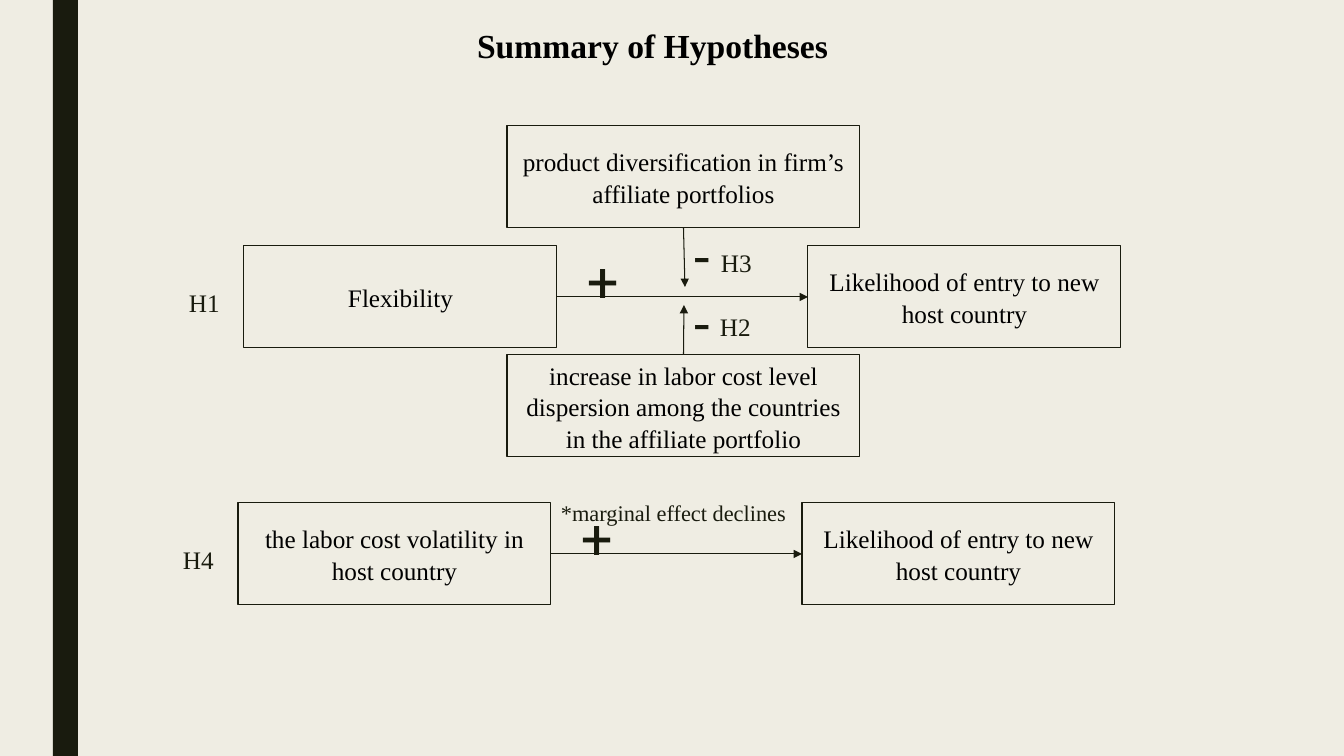
from dataclasses import dataclass

from lxml.etree import SubElement
from pptx import Presentation
from pptx.dml.color import RGBColor
from pptx.enum.shapes import MSO_CONNECTOR, MSO_SHAPE
from pptx.enum.text import MSO_ANCHOR, MSO_AUTO_SIZE, PP_ALIGN
from pptx.oxml.ns import qn
from pptx.util import Emu, Pt

SLIDE_WIDTH, SLIDE_HEIGHT = 1344, 756
TOP, LEFT, BOTTOM, RIGHT = range(4)


def px(length):
    return Emu(round(length * 12192000 / SLIDE_WIDTH))


@dataclass(frozen=True)
class Theme:
    paper: RGBColor = RGBColor(0xEF, 0xED, 0xE3)
    ink: RGBColor = RGBColor(0x19, 0x1B, 0x0E)
    black: RGBColor = RGBColor(0, 0, 0)
    serif: str = "Times New Roman"
    sans: str = "Roboto"
    title_size: int = 24
    body_size: int = 18
    note_size: int = 16
    sign_size: int = 40
    outline: float = 0.75
    box_spacing: float = 1.05


class HypothesisSlide:
    def __init__(self, deck, theme):
        self.theme = theme
        self.slide = deck.slides.add_slide(deck.slide_layouts[5])
        self.slide.background.fill.solid()
        self.slide.background.fill.fore_color.rgb = theme.paper

    def fill_text(self, frame, text, size, color, font, bold=False, margin=10,
                  anchor=MSO_ANCHOR.TOP, align=PP_ALIGN.LEFT):
        frame.word_wrap = True
        frame.auto_size = MSO_AUTO_SIZE.NONE
        frame.vertical_anchor = anchor
        frame.margin_left = frame.margin_right = px(10)
        frame.margin_top = frame.margin_bottom = px(margin)
        paragraph = frame.paragraphs[0]
        paragraph.alignment = align
        run = paragraph.add_run()
        run.text = text
        run.font.size = Pt(size)
        run.font.name = font
        run.font.bold = bold
        run.font.color.rgb = color
        return paragraph

    def title(self, text, left, top, width, height):
        heading = self.slide.shapes.title
        heading.left, heading.top = px(left), px(top)
        heading.width, heading.height = px(width), px(height)
        self.fill_text(heading.text_frame, text, self.theme.title_size,
                       self.theme.black, self.theme.serif, bold=True, margin=5)

    def rectangle(self, left, top, width, height, fill):
        panel = self.slide.shapes.add_shape(
            MSO_SHAPE.RECTANGLE, px(left), px(top), px(width), px(height))
        panel.shadow.inherit = False
        panel.fill.solid()
        panel.fill.fore_color.rgb = fill
        return panel

    def bar(self, left, width):
        stripe = self.rectangle(left, 0, width, SLIDE_HEIGHT, self.theme.ink)
        stripe.line.fill.background()

    def box(self, text, left, top, width, height=102):
        concept = self.rectangle(left, top, width, height, self.theme.paper)
        concept.line.color.rgb = self.theme.ink
        concept.line.width = Pt(self.theme.outline)
        paragraph = self.fill_text(
            concept.text_frame, text, self.theme.body_size, self.theme.black,
            self.theme.serif, anchor=MSO_ANCHOR.MIDDLE, align=PP_ALIGN.CENTER)
        paragraph.line_spacing = self.theme.box_spacing
        return concept

    def label(self, text, left, top, width=72, size=None, font=None):
        caption = self.slide.shapes.add_textbox(px(left), px(top), px(width), px(32))
        self.fill_text(caption.text_frame, text, size or self.theme.body_size,
                       self.theme.ink, font or self.theme.serif)

    def sign(self, symbol, left, top):
        self.label(symbol, left, top, 56, self.theme.sign_size, self.theme.sans)

    def arrow(self, source, side, end_x, end_y, target=None):
        effect = self.slide.shapes.add_connector(
            MSO_CONNECTOR.STRAIGHT, px(end_x), px(end_y), px(end_x), px(end_y))
        effect.begin_connect(source, side)
        if target is not None:
            effect.end_connect(target, LEFT)
        effect.line.color.rgb = self.theme.ink
        effect.line.width = Pt(self.theme.outline)
        properties = effect.element.spPr
        SubElement(properties.find(qn("a:ln")), qn("a:tailEnd"), type="triangle")
        SubElement(properties, qn("a:effectLst"))

    def direct_effect(self, name, cause, left, top):
        driver = self.box(cause, left, top, 313)
        outcome = self.box("Likelihood of entry to new host country", left + 564, top, 313)
        self.arrow(driver, RIGHT, left + 564, top + 51, outcome)
        self.sign("+", left + 333, top - 9)
        self.label(name, left - 65, top + 31)

    def moderator(self, name, text, top, side, tip, sign_top, name_left, name_top):
        influence = self.box(text, 507, top, 353)
        self.arrow(influence, side, *tip)
        self.sign("-", 684, sign_top)
        self.label(name, name_left, name_top)


def main():
    deck = Presentation()
    deck.slide_width, deck.slide_height = px(SLIDE_WIDTH), px(SLIDE_HEIGHT)
    theme = Theme()
    summary = HypothesisSlide(deck, theme)
    summary.bar(53, 25)
    summary.title("Summary of Hypotheses", 467, 20, 672, 50)
    summary.direct_effect("H1", "Flexibility", 244, 246)
    summary.moderator(
        "H2", "increase in labor cost level dispersion among the countries in the affiliate portfolio",
        355, TOP, (684, 305), 279, 710, 301)
    summary.moderator(
        "H3", "product diversification in firm’s affiliate portfolios",
        126, BOTTOM, (685, 287), 212, 711, 237)
    summary.direct_effect("H4", "the labor cost volatility in host country", 238, 503)
    summary.label("*marginal effect declines", 551, 489, 363, theme.note_size)
    deck.save("out.pptx")


if __name__ == "__main__":
    main()
